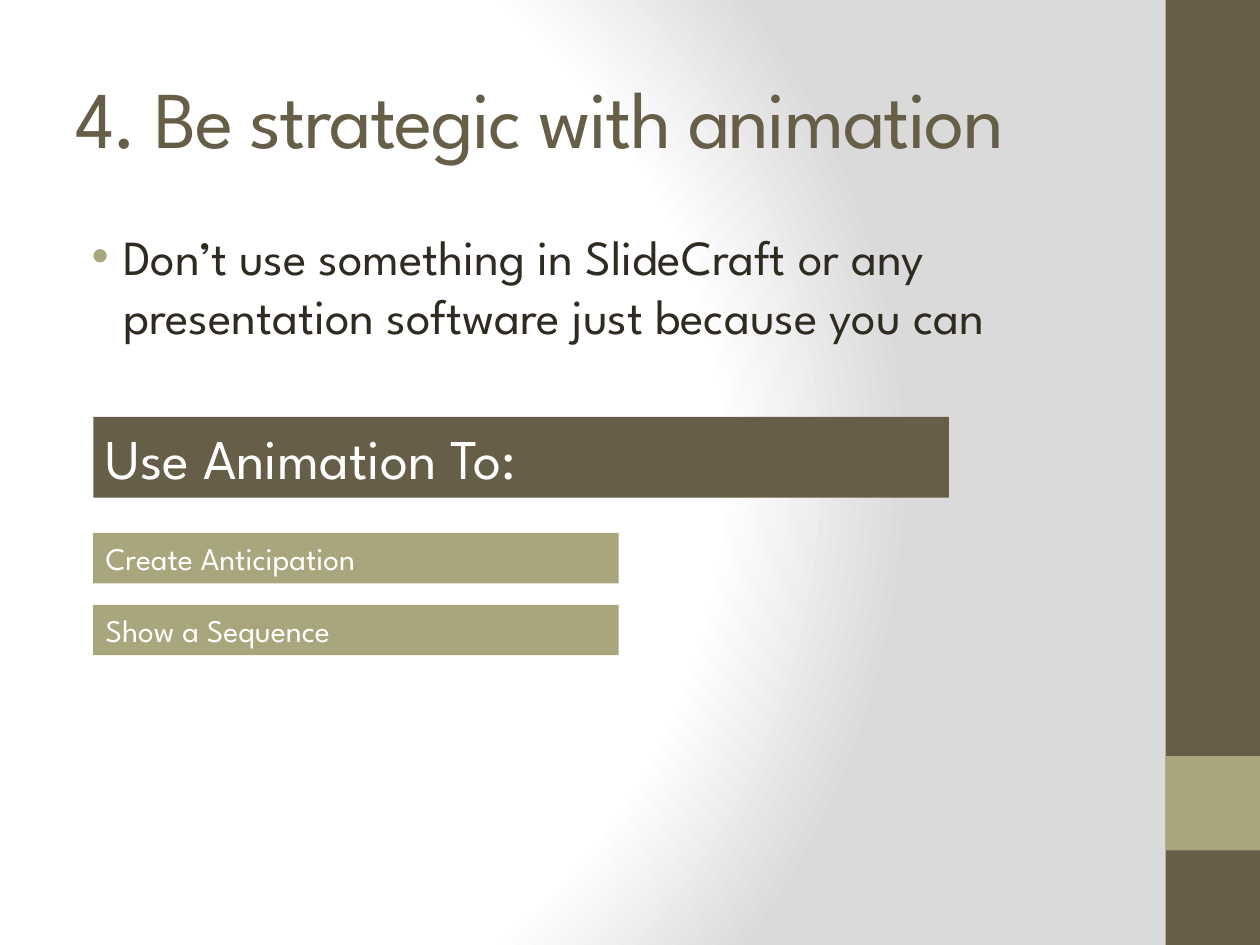
import pptx
import pptx.dml.color
import pptx.enum.shapes
import pptx.enum.text
import pptx.oxml
import pptx.oxml.ns
import pptx.util

PX = 9144  # 100 px to the inch
FONT = "League Spartan"
HUES = {"brown": "675E47", "olive": "A9A57C", "ink": "2F2B20",
        "white": "FFFFFF", "gray": "DADADA"}
NS = pptx.oxml.ns.nsdecls("a", "p")

deck = pptx.Presentation()
deck.slide_width, deck.slide_height = 1000 * PX, 750 * PX
slide = deck.slides.add_slide(deck.slide_layouts[6])


def add_bar(x, y, w, h, hue):
    bar = slide.shapes.add_shape(
        pptx.enum.shapes.MSO_SHAPE.RECTANGLE, x * PX, y * PX, w * PX, h * PX)
    bar.shadow.inherit = False
    bar.fill.solid()
    bar.fill.fore_color.rgb = pptx.dml.color.RGBColor.from_string(HUES[hue])
    bar.line.fill.background()
    return bar


def set_text(shape, words, size, hue, anchor):
    frame = shape.text_frame
    frame.word_wrap = True
    frame.vertical_anchor = anchor
    para = frame.paragraphs[0]
    para.text = words
    para.alignment = pptx.enum.text.PP_ALIGN.LEFT
    para.font.name = FONT
    para.font.size = pptx.util.Pt(size)
    para.font.color.rgb = pptx.dml.color.RGBColor.from_string(HUES[hue])
    return para


# Background: round gradient, white to gray
stops = "".join(
    f'<a:gs pos="{pos * 1000}"><a:srgbClr val="{HUES[hue]}"/></a:gs>'
    for pos, hue in [(0, "white"), (75, "white"), (100, "gray")])
slide.element.cSld.insert(0, pptx.oxml.parse_xml(
    f'<p:bg {NS}><p:bgPr><a:gradFill rotWithShape="1"><a:gsLst>{stops}</a:gsLst>'
    '<a:path path="circle">'
    '<a:fillToRect l="20000" t="50000" r="100000" b="50000"/></a:path>'
    '</a:gradFill><a:effectLst/></p:bgPr></p:bg>'))

# Side band
add_bar(925, 0, 75, 750, "brown")
add_bar(925, 600, 75, 75, "olive")

# Title
top = pptx.enum.text.MSO_ANCHOR.TOP
mid = pptx.enum.text.MSO_ANCHOR.MIDDLE
box = slide.shapes.add_textbox(50 * PX, 30 * PX, 833 * PX, 125 * PX)
title = set_text(box, "4. Be strategic with animation", 46, "brown", mid)
title.runs[0].font._element.set("spc", "-100")

# Bullet point
box = slide.shapes.add_textbox(50 * PX, 175 * PX, 833 * PX, 137 * PX)
point = set_text(
    box, "Don’t use something in SlideCraft or any presentation software "
    "just because you can", 28, "ink", top)
props = point._p.get_or_add_pPr()
props.set("marL", str(38 * PX))
props.set("indent", str(-25 * PX))
marks = [f'<a:buClr {NS}><a:srgbClr val="{HUES["olive"]}"/></a:buClr>',
         f'<a:buFont {NS} typeface="Arial"/>',
         f'<a:buChar {NS} char="•"/>']
for spot, mark in enumerate(marks):
    props.insert(spot, pptx.oxml.parse_xml(mark))

# Heading bar and its two uses
bar = add_bar(74, 331, 679, 64, "brown")
set_text(bar, "Use Animation To:", 32, "white", top)
for row, words in enumerate(["Create Anticipation", "Show a Sequence"]):
    bar = add_bar(74, 423 + 57 * row, 417, 40, "olive")
    set_text(bar, words, 18, "white", top)

deck.save("out.pptx")
